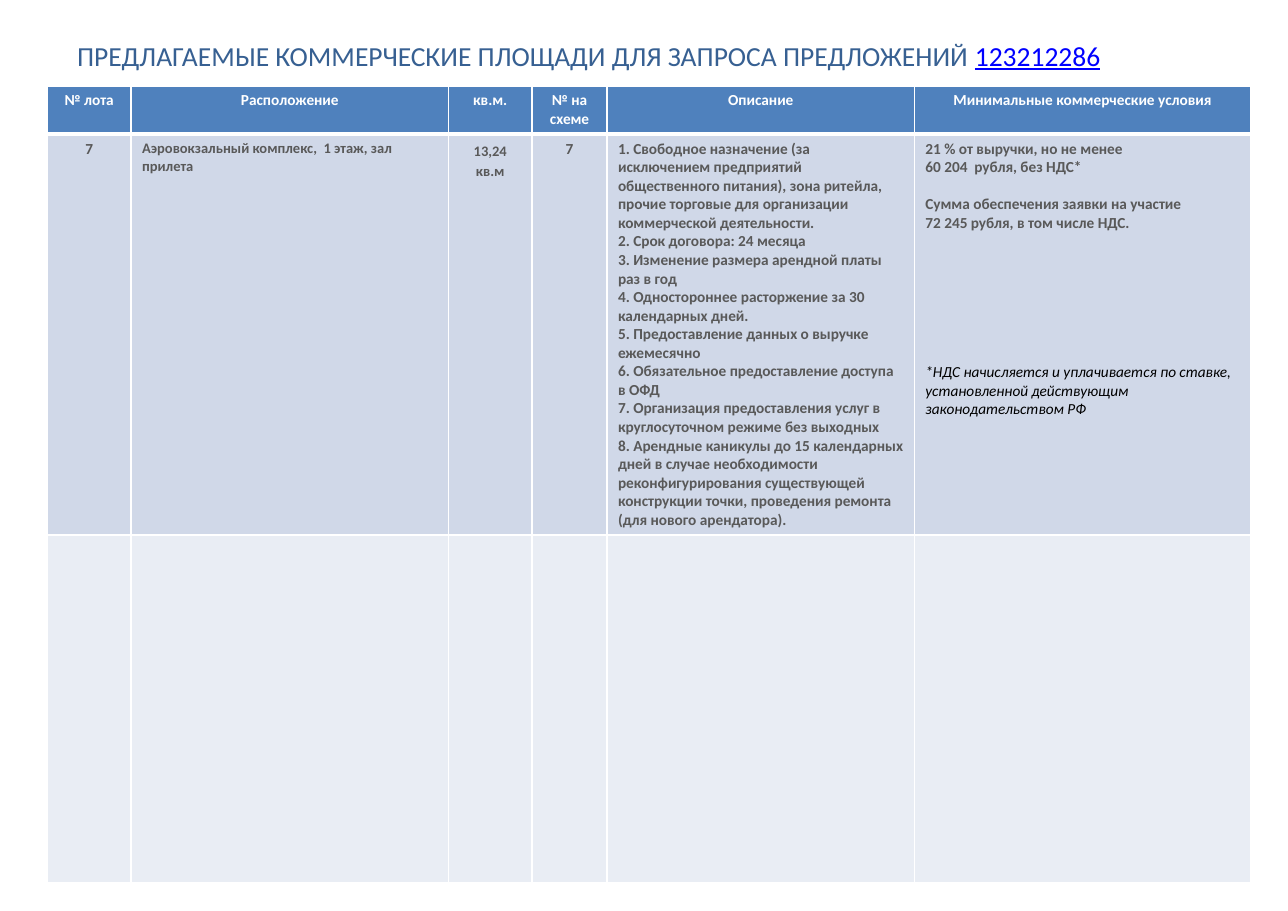
from lxml import etree
from pptx import Presentation
from pptx import util as u
from pptx.dml.color import RGBColor
from pptx.enum import text
from pptx.oxml.ns import qn

PX = 9144
COLORS = {
    "white": "FFFFFF", "black": "000000", "header": "4F81BD", "row": "D0D8E8",
    "empty": "E9EDF4", "gray": "595959", "title": "376092", "number": "0000FF",
}
LEFT, CENTER = text.PP_ALIGN.LEFT, text.PP_ALIGN.CENTER
LINE = 12.2


class Deck:
    def __init__(self, width, height, font):
        self.prs = Presentation()
        self.prs.slide_width, self.prs.slide_height = width * PX, height * PX
        self.slide = self.prs.slides.add_slide(self.prs.slide_layouts[5])
        self.font = font

    def add_run(self, p, content, color, size, bold=False, italic=False, underline=False):
        r = p.add_run()
        r.text = content
        f = r.font
        f.name, f.size = self.font, u.Pt(size)
        f.bold, f.italic, f.underline = bold, italic, underline
        f.color.rgb = RGBColor.from_string(COLORS[color])

    def add_title(self, x, y, w, h, runs):
        sp = self.slide.shapes.title
        sp.left, sp.top, sp.width, sp.height = (v * PX for v in (x, y, w, h))
        tf = sp.text_frame
        tf.word_wrap = True
        tf.auto_size = text.MSO_AUTO_SIZE.NONE
        tf.vertical_anchor = text.MSO_ANCHOR.TOP
        p = tf.paragraphs[0]
        p.alignment = LEFT
        for content, color, underline in runs:
            self.add_run(p, content, color, 18, underline=underline)

    def add_table(self, x, y, cols, rows):
        frame = self.slide.shapes.add_table(
            len(rows), len(cols), x * PX, y * PX, sum(cols) * PX, sum(rows) * PX)
        tbl = frame.table
        for col, width in zip(tbl.columns, cols):
            col.width = width * PX
        for row, height in zip(tbl.rows, rows):
            row.height = height * PX
        return tbl

    def add_borders(self, cell, widths):
        tc_pr = cell._tc.get_or_add_tcPr()
        for i, (side, width) in enumerate(zip("LRTB", widths)):
            ln = etree.Element(qn(f"a:ln{side}"), w=str(u.Pt(width)))
            fill = etree.SubElement(ln, qn("a:solidFill"))
            etree.SubElement(fill, qn("a:srgbClr"), val=COLORS["white"])
            tc_pr.insert(i, ln)

    def style_cell(self, cell, fill, top=1, bottom=1):
        cell.fill.solid()
        cell.fill.fore_color.rgb = RGBColor.from_string(COLORS[fill])
        self.add_borders(cell, (1, 1, top, bottom))

    def fill_text(self, cell, lines, color, size=10, align=LEFT, spacing=None):
        tf = cell.text_frame
        for i, line in enumerate(lines):
            p = tf.paragraphs[0] if i == 0 else tf.add_paragraph()
            p.alignment = align
            if spacing:
                p.line_spacing = spacing
            self.add_run(p, line, color, size, bold=True)

    def add_note(self, cell, content, gap):
        p = cell.text_frame.add_paragraph()
        p.space_before = u.Pt(gap)
        self.add_run(p, content, "black", 10, italic=True)


def main():
    deck = Deck(1169, 827, "Calibri")
    deck.add_title(60, 30, 1067, 68, [
        ("ПРЕДЛАГАЕМЫЕ КОММЕРЧЕСКИЕ ПЛОЩАДИ ДЛЯ ЗАПРОСА ПРЕДЛОЖЕНИЙ ", "title", False),
        ("123212286", "number", True),
    ])

    lots = deck.add_table(43, 78, [76, 288, 76, 68, 279, 305], [41, 361, 316])
    heads = ["№ лота", "Расположение", "кв.м.", "№ на схеме", "Описание",
             "Минимальные коммерческие условия"]
    for c, head in enumerate(heads):
        deck.style_cell(lots.cell(0, c), "header", bottom=3)
        deck.style_cell(lots.cell(1, c), "row", top=3)
        deck.style_cell(lots.cell(2, c), "empty")
        deck.fill_text(lots.cell(0, c), [head], "white", align=CENTER)

    lot, place, area, scheme, about, terms = (lots.cell(1, c) for c in range(6))
    for number in (lot, scheme):
        deck.fill_text(number, ["7"], "gray", align=CENTER)
    deck.fill_text(place, ["Аэровокзальный комплекс,  1 этаж, зал прилета"], "gray", 9.5)
    deck.fill_text(area, ["13,24 кв.м"], "gray", 9.5, CENTER, 1.15)
    deck.fill_text(about, [
        "1. Свободное назначение (за исключением предприятий общественного питания), "
        "зона ритейла,  прочие торговые для организации коммерческой деятельности.",
        "2. Срок договора: 24 месяца",
        "3. Изменение размера арендной платы раз в год",
        "4. Одностороннее расторжение за 30 календарных дней.",
        "5. Предоставление данных о выручке ежемесячно",
        "6. Обязательное предоставление доступа в ОФД",
        "7. Организация предоставления услуг в круглосуточном режиме без выходных",
        "8. Арендные каникулы до 15 календарных дней в случае необходимости "
        "реконфигурирования существующей конструкции точки, проведения ремонта "
        "(для нового арендатора).",
    ], "gray")
    deck.fill_text(terms, [
        "21 % от выручки, но не менее",
        "60 204  рубля, без НДС*",
        "Сумма обеспечения заявки на участие",
        "72 245 рубля, в том числе НДС.",
    ], "gray")
    terms.text_frame.paragraphs[2].space_before = u.Pt(LINE)
    deck.add_note(terms, "*НДС начисляется и уплачивается по ставке, установленной "
                  "действующим законодательством РФ", 7 * LINE)

    deck.prs.save("out.pptx")


if __name__ == "__main__":
    main()
